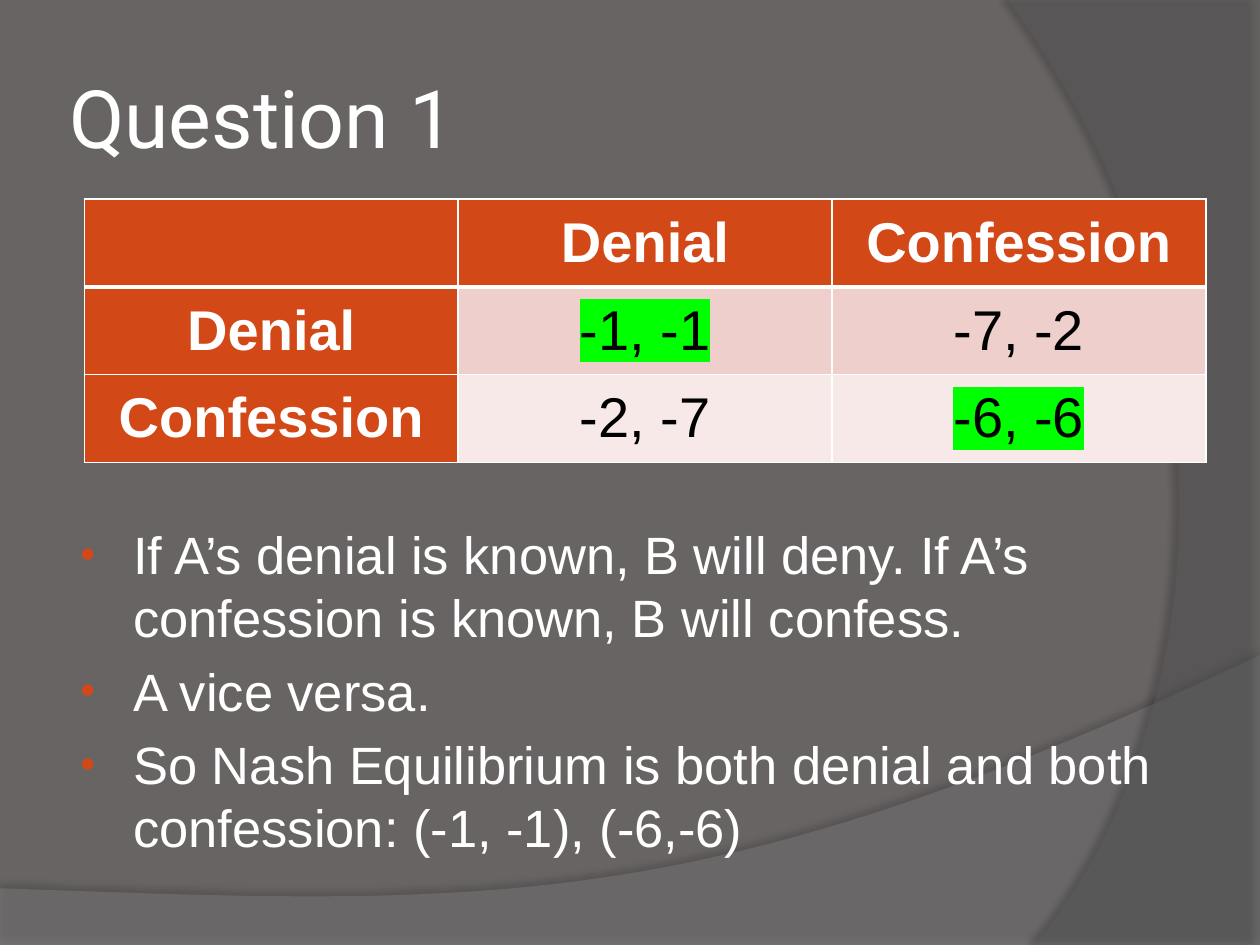
"""Build the Question 1 slide: a payoff matrix and its Nash equilibria."""
import lxml.etree
import pptx
import pptx.dml.color
import pptx.enum.text
import pptx.oxml
import pptx.oxml.ns
import pptx.util

Pt = pptx.util.Pt
RGB = pptx.dml.color.RGBColor
qn = pptx.oxml.ns.qn
ANCHOR = pptx.enum.text.MSO_ANCHOR
ALIGN = pptx.enum.text.PP_ALIGN

BACKGROUND = RGB(0x69, 0x64, 0x64)
ORANGE = RGB(0xD3, 0x48, 0x17)
WHITE = RGB(0xFF, 0xFF, 0xFF)
BLACK = RGB(0x00, 0x00, 0x00)
GREEN = RGB(0x00, 0xFF, 0x00)
BANDS = [RGB(0xEF, 0xCF, 0xCC), RGB(0xF7, 0xE9, 0xE8)]

TITLE = "Question 1"
PAYOFFS = [
    ["", "Denial", "Confession"],
    ["Denial", "-1, -1", "-7, -2"],
    ["Confession", "-2, -7", "-6, -6"],
]
EQUILIBRIA = {"-1, -1", "-6, -6"}
BULLETS = [
    "If A’s denial is known, B will deny. If A’s confession is known, B will confess.",
    "A vice versa.",
    "So Nash Equilibrium is both denial and both confession: (-1, -1), (-6,-6)",
]
SWOOSHES = [
    dict(curve=[(720, 374.4), (402.5, 524.9), (281.5, 517.7), (0, 507.6)],
         corners=[(0, 540), (720, 540)],
         color=RGB(0x7F, 0x7F, 0x7F), alpha=45, shade=35, dist=3.5, angle=270),
    dict(curve=[(591.1, 540), (673.2, 445.7), (733, 216), (576, 0)],
         corners=[(720, 0), (720, 540)],
         color=RGB(0x5E, 0x5E, 0x5E), alpha=40, shade=45, dist=4, angle=180),
]
TABLE_LEFT, TABLE_TOP, COL_WIDTH, ROW_HEIGHT = 48.24, 113.76, 213.6, 50.16
CURVE_STEPS = 48


def add_sub(parent, tag, **attrs):
    return lxml.etree.SubElement(parent, qn(tag), {k: str(v) for k, v in attrs.items()})


def bezier(ends, t):
    weights = ((1 - t) ** 3, 3 * t * (1 - t) ** 2, 3 * t * t * (1 - t), t ** 3)
    return tuple(sum(w * p[axis] for w, p in zip(weights, ends)) for axis in (0, 1))


def add_swoosh(s, curve, corners, color, alpha, shade, dist, angle):
    points = [bezier(curve, i / CURVE_STEPS) for i in range(CURVE_STEPS + 1)] + corners
    points = [(Pt(x), Pt(y)) for x, y in points]
    builder = s.shapes.build_freeform(*points[0], scale=1.0)
    builder.add_line_segments(points[1:], close=True)
    sp = builder.convert_to_shape()
    sp.fill.solid()
    sp.fill.fore_color.rgb = color
    sp.line.fill.background()
    sp.shadow.inherit = False
    props = sp._element.spPr
    add_sub(props.find(".//" + qn("a:srgbClr")), "a:alpha", val=alpha * 1000)
    shadow = add_sub(props.find(qn("a:effectLst")), "a:outerShdw", blurRad=Pt(4),
                     dist=Pt(dist), dir=angle * 60000, algn="ctr", rotWithShape=0)
    add_sub(add_sub(shadow, "a:srgbClr", val=BLACK), "a:alpha", val=shade * 1000)


def add_run(p, text, size, color, font="Arial", bold=False):
    r = p.add_run()
    r.text = text
    r.font.size, r.font.name, r.font.bold = Pt(size), font, bold
    r.font.color.rgb = color
    return r


def add_text_frame(s, left, top, width, height):
    tf = s.shapes.add_textbox(Pt(left), Pt(top), Pt(width), Pt(height)).text_frame
    tf.word_wrap = True
    return tf


def highlight(r):
    mark = pptx.oxml.parse_xml(f"<a:highlight {pptx.oxml.ns.nsdecls('a')}/>")
    add_sub(mark, "a:srgbClr", val=GREEN)
    r._r.get_or_add_rPr().find(qn("a:solidFill")).addnext(mark)


def add_borders(cell, row):
    widths = {"L": 1, "R": 1, "T": 3 if row == 1 else 1, "B": 3 if row == 0 else 1}
    for side, width in widths.items():
        line = add_sub(cell._tc.get_or_add_tcPr(), "a:ln" + side, w=Pt(width))
        add_sub(add_sub(line, "a:solidFill"), "a:srgbClr", val=WHITE)


def add_payoffs(s):
    rows, cols = len(PAYOFFS), len(PAYOFFS[0])
    table = s.shapes.add_table(rows, cols, Pt(TABLE_LEFT), Pt(TABLE_TOP),
                               Pt(COL_WIDTH * cols), Pt(ROW_HEIGHT * rows)).table
    for i, texts in enumerate(PAYOFFS):
        for j, text in enumerate(texts):
            cell = table.cell(i, j)
            header = i == 0 or j == 0
            add_borders(cell, i)
            cell.fill.solid()
            cell.fill.fore_color.rgb = ORANGE if header else BANDS[i - 1]
            cell.vertical_anchor = ANCHOR.MIDDLE
            cell.margin_left = cell.margin_right = Pt(5)
            cell.margin_top = cell.margin_bottom = 0
            p = cell.text_frame.paragraphs[0]
            p.alignment = ALIGN.CENTER
            if text:
                r = add_run(p, text, 32, WHITE if header else BLACK, bold=header)
                if text in EQUILIBRIA:
                    highlight(r)


def add_bullets(s):
    tf = add_text_frame(s, 36, 294.8, 653, 208)
    for i, text in enumerate(BULLETS):
        p = tf.add_paragraph() if i else tf.paragraphs[0]
        p.line_spacing, p.space_after = Pt(36), Pt(6)
        props = p._p.get_or_add_pPr()
        props.set("marL", str(Pt(33.12)))
        props.set("indent", str(Pt(-30.24)))
        add_sub(add_sub(props, "a:buClr"), "a:srgbClr", val=ORANGE)
        add_sub(props, "a:buSzPct", val=80000)
        add_sub(props, "a:buFont", typeface="Arial")
        add_sub(props, "a:buChar", char="•")
        add_run(p, text, 30, WHITE)


def main():
    prs = pptx.Presentation()
    prs.slide_width, prs.slide_height = Pt(720), Pt(540)
    s = prs.slides.add_slide(prs.slide_layouts[6])
    s.background.fill.solid()
    s.background.fill.fore_color.rgb = BACKGROUND
    for swoosh in SWOOSHES:
        add_swoosh(s, **swoosh)
    tf = add_text_frame(s, 36, 21.6, 588.24, 90)
    tf.vertical_anchor = ANCHOR.MIDDLE
    tf.margin_left = tf.margin_right = Pt(3.6)
    add_run(tf.paragraphs[0], TITLE, 46, WHITE, font="Roboto")
    add_bullets(s)
    add_payoffs(s)
    prs.save("out.pptx")


if __name__ == "__main__":
    main()
